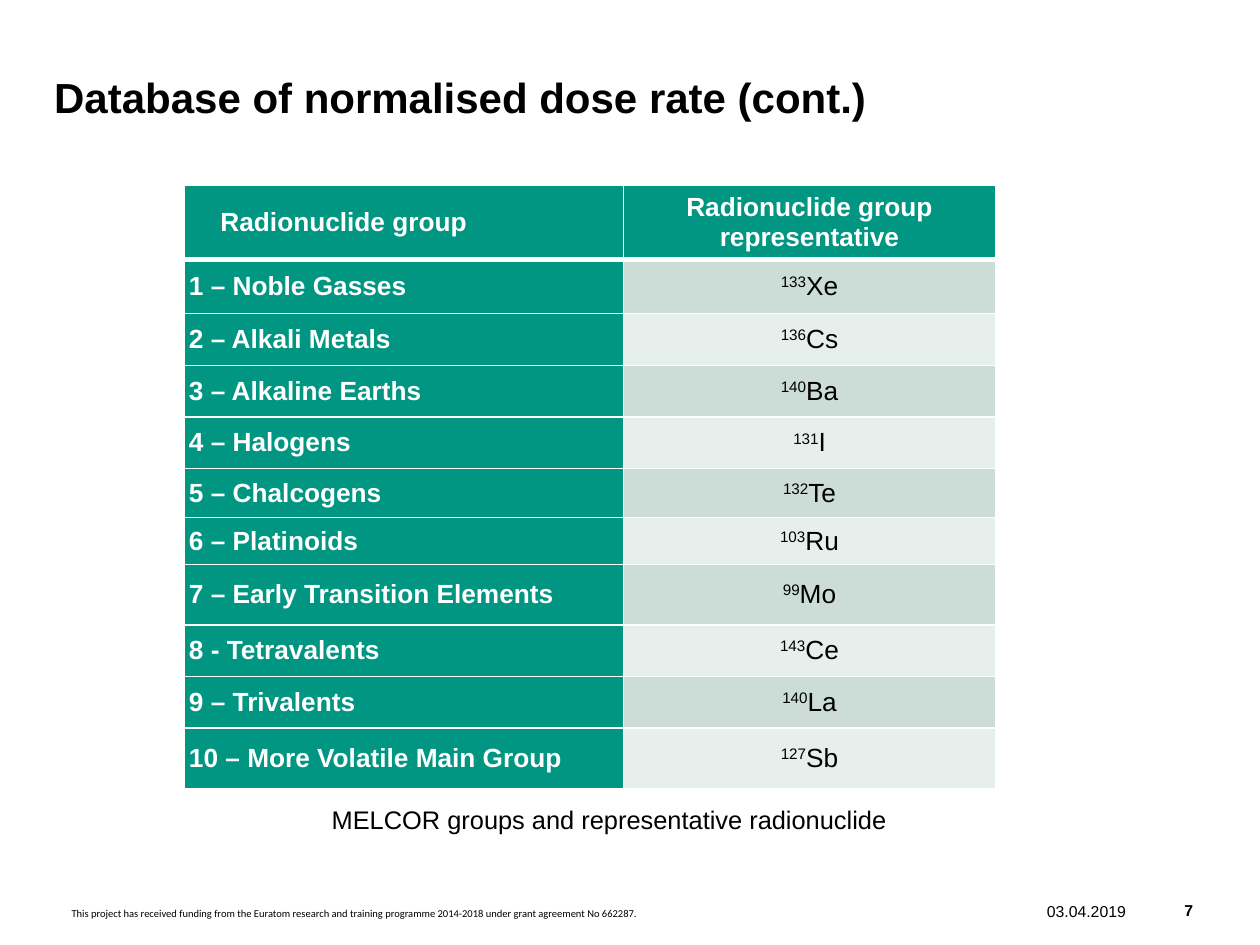
from lxml import etree
from pptx import Presentation
from pptx.dml.color import RGBColor
from pptx.enum.text import MSO_ANCHOR, PP_ALIGN
from pptx.oxml.ns import qn
from pptx.util import Inches, Pt

LEFT, CENTER, JUSTIFY = PP_ALIGN.LEFT, PP_ALIGN.CENTER, PP_ALIGN.JUSTIFY
TOP, MIDDLE, BOTTOM = MSO_ANCHOR.TOP, MSO_ANCHOR.MIDDLE, MSO_ANCHOR.BOTTOM

BLACK = RGBColor(0x00, 0x00, 0x00)
WHITE = RGBColor(0xFF, 0xFF, 0xFF)
GREEN = RGBColor(0x00, 0x96, 0x82)
BANDS = (RGBColor(0xCC, 0xDD, 0xD8), RGBColor(0xE7, 0xEF, 0xED))

SLIDE_WIDTH, SLIDE_HEIGHT = Inches(10), Inches(7.5)
GRID_COLUMNS, GRID_ROWS = 100, 75

HEADINGS = ("Radionuclide group", "Radionuclide group representative")
HEADING_HEIGHT = 5.9
GROUPS = (
    ("1 – Noble Gasses", "133", "Xe", 4.3),
    ("2 – Alkali Metals", "136", "Cs", 4.1),
    ("3 – Alkaline Earths", "140", "Ba", 4.1),
    ("4 – Halogens", "131", "I", 4.1),
    ("5 – Chalcogens", "132", "Te", 3.9),
    ("6 – Platinoids", "103", "Ru", 3.7),
    ("7 – Early Transition Elements", "99", "Mo", 4.8),
    ("8 - Tetravalents", "143", "Ce", 4.1),
    ("9 – Trivalents", "140", "La", 4.1),
    ("10 – More Volatile Main Group", "127", "Sb", 4.8),
)
COLUMN_WIDTHS = (34.9, 29.5)


def columns(count):
    return round(SLIDE_WIDTH * count / GRID_COLUMNS)


def rows(count):
    return round(SLIDE_HEIGHT * count / GRID_ROWS)


def write(paragraph, text, size=15, font="Arial", color=BLACK, bold=False,
          align=LEFT, superscript=False):
    paragraph.alignment = align
    run = paragraph.add_run()
    run.text = text
    run.font.size = Pt(size)
    run.font.name = font
    run.font.bold = bold
    run.font.color.rgb = color
    if superscript:
        run.font._element.set("baseline", "30000")


def add_label(slide, text, left, top, width, height, anchor=TOP,
              margins=(0, 0), **style):
    label = slide.shapes.add_textbox(
        columns(left), rows(top), columns(width), rows(height))
    frame = label.text_frame
    frame.word_wrap = True
    frame.vertical_anchor = anchor
    frame.margin_left = frame.margin_right = columns(margins[0])
    frame.margin_top = frame.margin_bottom = rows(margins[1])
    write(frame.paragraphs[0], text, **style)


def draw_borders(cell, bottom):
    properties = cell._tc.get_or_add_tcPr()
    for side, width in (("L", 1), ("R", 1), ("T", 1), ("B", bottom)):
        line = etree.SubElement(
            properties, qn(f"a:ln{side}"), w=str(Pt(width)))
        fill = etree.SubElement(line, qn("a:solidFill"))
        etree.SubElement(fill, qn("a:srgbClr"), val=str(WHITE))


def prepare_cell(cell, color, bottom=1):
    draw_borders(cell, bottom)
    cell.fill.solid()
    cell.fill.fore_color.rgb = color
    cell.vertical_anchor = MIDDLE
    cell.margin_left = cell.margin_right = columns(0.4)
    cell.margin_top = cell.margin_bottom = 0
    return cell.text_frame.paragraphs[0]


def add_group_table(slide, left, top):
    heights = [HEADING_HEIGHT] + [group[-1] for group in GROUPS]
    table = slide.shapes.add_table(
        len(heights), len(COLUMN_WIDTHS), columns(left), rows(top),
        columns(sum(COLUMN_WIDTHS)), rows(sum(heights))).table
    table.horz_banding = False
    for column, width in zip(table.columns, COLUMN_WIDTHS):
        column.width = columns(width)
    for row, height in zip(table.rows, heights):
        row.height = rows(height)

    for index, (heading, align) in enumerate(zip(HEADINGS, (JUSTIFY, CENTER))):
        paragraph = prepare_cell(table.cell(0, index), GREEN, bottom=3)
        write(paragraph, heading, color=WHITE, bold=True, align=align)
        if align == JUSTIFY:
            properties = paragraph._p.get_or_add_pPr()
            properties.set("marL", str(columns(2.5)))
            properties.set("indent", "0")

    for index, (group, mass, element, _) in enumerate(GROUPS):
        name = prepare_cell(table.cell(index + 1, 0), GREEN)
        write(name, group, color=WHITE, bold=True)
        nuclide = prepare_cell(
            table.cell(index + 1, 1), BANDS[index % len(BANDS)])
        write(nuclide, mass, align=CENTER, superscript=True)
        write(nuclide, element, align=CENTER)


def main():
    deck = Presentation()
    deck.slide_width, deck.slide_height = SLIDE_WIDTH, SLIDE_HEIGHT
    slide = deck.slides.add_slide(deck.slide_layouts[6])

    add_label(slide, "7", 94, 71.5, 3.6, 2.4, size=9, bold=True)
    add_label(slide, "03.04.2019", 83.1, 71.6, 9.4, 2.1, size=9)
    add_label(slide, "This project has received funding from the Euratom "
              "research and training programme 2014-2018 under grant "
              "agreement No 662287.", 4.7, 71.5, 57.4, 2,
              margins=(1, 0.5), size=6, font="Calibri")
    add_label(slide, "Database of normalised dose rate (cont.)",
              4.3, 3.6, 75.6, 6.1, anchor=BOTTOM, size=24, bold=True)
    add_label(slide, "MELCOR groups and representative radionuclide",
              23.2, 63.8, 50.3, 3.9, size=14.5, align=CENTER)
    add_group_table(slide, 14.6, 14.7)

    deck.save("out.pptx")


if __name__ == "__main__":
    main()
